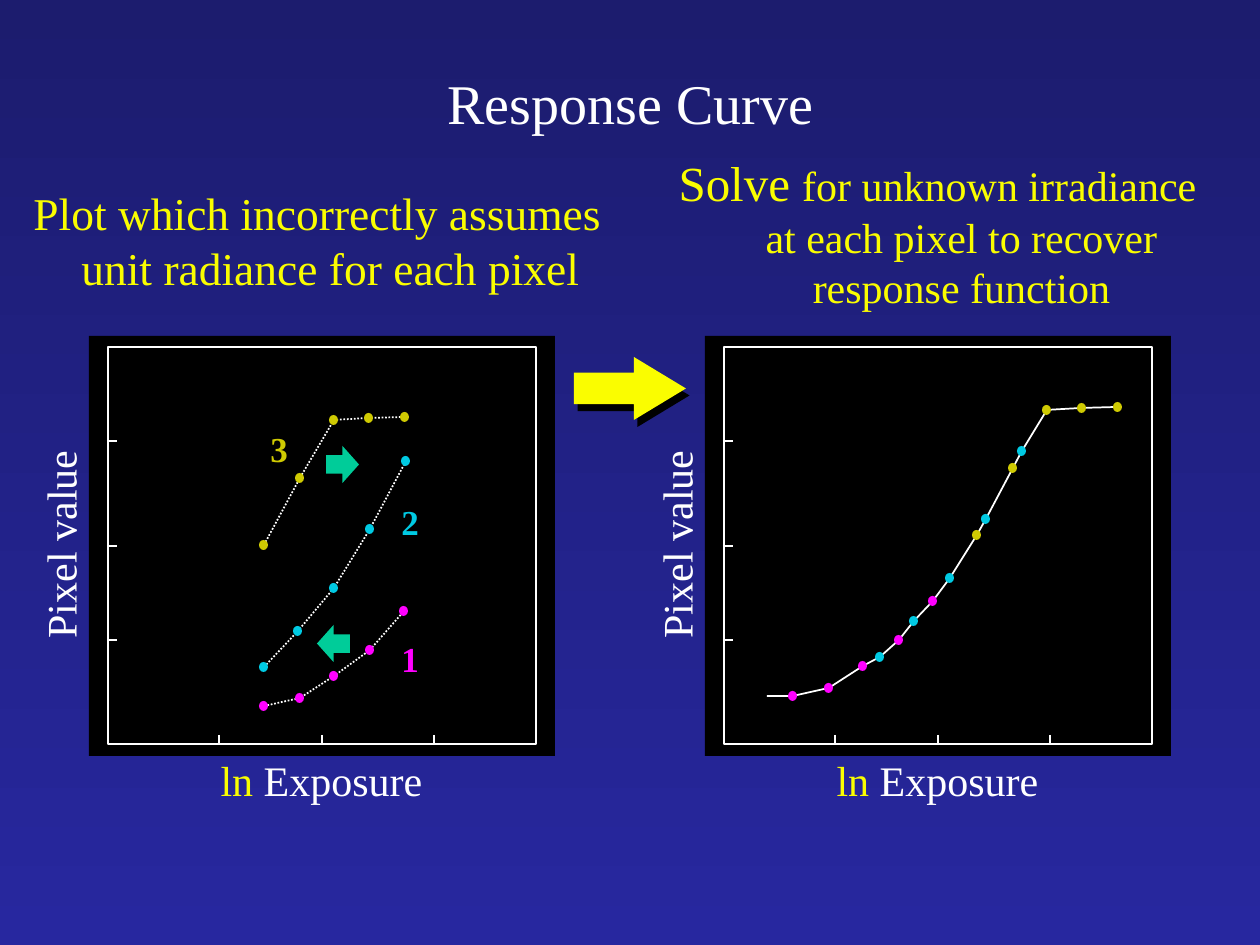
from lxml import etree
from pptx import Presentation
from pptx.dml.color import RGBColor
from pptx.enum.dml import MSO_LINE
from pptx.enum.shapes import MSO_CONNECTOR, MSO_SHAPE
from pptx.enum.text import PP_ALIGN
from pptx.oxml.ns import qn
from pptx.util import Pt

PX = 914400 // 126
FONT = "Times New Roman"
LEFT, CENTER = PP_ALIGN.LEFT, PP_ALIGN.CENTER
RECTANGLE, OVAL, ARROW = MSO_SHAPE.RECTANGLE, MSO_SHAPE.OVAL, MSO_SHAPE.RIGHT_ARROW
STRAIGHT, DOTTED = MSO_CONNECTOR.STRAIGHT, MSO_LINE.ROUND_DOT

WHITE = RGBColor(0xFF, 0xFF, 0xFF)
BLACK = RGBColor(0x00, 0x00, 0x00)
YELLOW = RGBColor(0xFA, 0xFD, 0x00)
OLIVE = RGBColor(0xCF, 0xCA, 0x02)
CYAN = RGBColor(0x00, 0xCA, 0xE3)
MAGENTA = RGBColor(0xFF, 0x00, 0xFF)
GREEN = RGBColor(0x00, 0xCC, 0x99)
NAVY_TOP = RGBColor(0x1C, 0x1C, 0x6E)
NAVY_BOTTOM = RGBColor(0x27, 0x27, 0x9F)

# box, runs (text, points, colour), alignment, hanging indent
HEADINGS = [
    ((192, 62, 877, 84), [("Response Curve", 32, WHITE)], CENTER, 48),
    ((21, 179, 602, 208),
     [("Plot which incorrectly assumes unit radiance for each pixel", 26, YELLOW)], LEFT, 48),
    ((658, 146, 559, 169),
     [("Solve ", 28, YELLOW),
      ("for unknown irradiance at each pixel to recover response function", 24, YELLOW)],
     CENTER, 48),
]
X_LABEL = [("ln", 24, YELLOW), (" Exposure", 24, WHITE)]
Y_LABEL = [("Pixel value", 24, WHITE)]

PANEL_STEP = 616
X_TICKS = (219, 322, 434)
Y_TICKS = (441, 546, 640)

# Points in the left panel; "shift" aligns the series with the recovered curve.
SERIES = [
    {"name": "3", "color": OLIVE, "label": (258, 421), "shift": (713, -10),
     "points": [(264, 545), (300, 478), (334, 420), (369, 418), (405, 417)]},
    {"name": "2", "color": CYAN, "label": (389, 494), "shift": (616, -10),
     "points": [(264, 667), (298, 631), (334, 588), (370, 529), (406, 461)]},
    {"name": "1", "color": MAGENTA, "label": (389, 631), "shift": (529, -10),
     "points": [(264, 706), (300, 698), (334, 676), (370, 650), (404, 611)]},
]
CURVE_START = (767, 696)


def scaled(values):
    return [value * PX for value in values]


def add_shadow(properties, distance, angle):
    """Append a hard black shadow; distance in points, angle in degrees."""
    effects = etree.SubElement(properties, qn("a:effectLst"))
    shadow = etree.SubElement(effects, qn("a:outerShdw"), dist=str(Pt(distance)),
                              dir=str(angle * 60000), algn="ctr", rotWithShape="0")
    etree.SubElement(shadow, qn("a:srgbClr"), val=str(BLACK))


def add_text(shapes, box, runs, alignment=CENTER, indent=0, rotation=0, bold=False, shadow=True):
    text_box = shapes.add_textbox(*scaled(box))
    text_box.rotation = rotation
    text_box.text_frame.word_wrap = True
    paragraph = text_box.text_frame.paragraphs[0]
    paragraph.alignment = alignment
    if indent:
        properties = paragraph._p.get_or_add_pPr()
        properties.set("marL", str(indent * PX))
        properties.set("indent", str(-indent * PX))
    for text, size, color in runs:
        run = paragraph.add_run()
        run.text = text
        run.font.size = Pt(size)
        run.font.bold = bold
        run.font.color.rgb = color
        if shadow:
            add_shadow(run.font._element, 2, 45)
        run.font.name = FONT


def style_line(line, dash=None):
    line.color.rgb = WHITE
    line.width = Pt(1)
    if dash:
        line.dash_style = dash


def add_filled(shapes, kind, box, color):
    shape = shapes.add_shape(kind, *scaled(box))
    shape.shadow.inherit = False
    shape.fill.solid()
    shape.fill.fore_color.rgb = color
    shape.line.fill.background()
    return shape


def add_tick(shapes, *ends):
    tick = shapes.add_connector(STRAIGHT, *scaled(ends))
    style_line(tick.line)
    etree.SubElement(tick._element.spPr, qn("a:effectLst"))


def add_panel(shapes, offset):
    add_filled(shapes, RECTANGLE, (89 + offset, 336, 466, 420), BLACK)
    frame = shapes.add_shape(RECTANGLE, *scaled((108 + offset, 347, 428, 397)))
    frame.shadow.inherit = False
    frame.fill.background()
    style_line(frame.line)
    for x in X_TICKS:
        add_tick(shapes, x + offset, 735, x + offset, 745)
    for y in Y_TICKS:
        add_tick(shapes, 107 + offset, y, 117 + offset, y)
    add_text(shapes, (88 + offset, 748, 467, 63), X_LABEL)
    add_text(shapes, (-155 + offset, 517, 422, 55), Y_LABEL, rotation=270)


def add_curve(shapes, points, dash=None):
    builder = shapes.build_freeform(*points[0], scale=PX)
    builder.add_line_segments(points[1:], close=False)
    curve = builder.convert_to_shape()
    curve.shadow.inherit = False
    curve.fill.background()
    style_line(curve.line, dash)


def add_dots(shapes, points, color):
    for x, y in points:
        add_filled(shapes, OVAL, (x - 5, y - 5, 9, 10), color)


def main():
    presentation = Presentation()
    presentation.slide_width, presentation.slide_height = scaled((1260, 945))
    slide = presentation.slides.add_slide(presentation.slide_layouts[6])
    shapes = slide.shapes

    background = slide.background.fill
    background.gradient()
    background.gradient_angle = 270
    for stop, color in zip(background.gradient_stops, (NAVY_TOP, NAVY_BOTTOM)):
        stop.color.rgb = color

    for box, runs, alignment, indent in HEADINGS:
        add_text(shapes, box, runs, alignment, indent)
    for offset in (0, PANEL_STEP):
        add_panel(shapes, offset)

    aligned = [[(x + series["shift"][0], y + series["shift"][1]) for x, y in series["points"]]
               for series in SERIES]
    add_curve(shapes, sorted([CURVE_START] + sum(aligned, [])))
    for series, aligned_points in zip(SERIES, aligned):
        color = series["color"]
        add_curve(shapes, series["points"], DOTTED)
        add_dots(shapes, series["points"], color)
        add_dots(shapes, aligned_points, color)
        add_text(shapes, (*series["label"], 69, 54), [(series["name"], 20, color)],
                 LEFT, bold=True, shadow=False)

    add_filled(shapes, ARROW, (326, 446, 33, 37), GREEN)
    add_filled(shapes, ARROW, (317, 625, 33, 37), GREEN).rotation = 180
    arrow = add_filled(shapes, ARROW, (574, 357, 112, 63), YELLOW)
    arrow.adjustments[1] = 0.826
    properties = arrow._element.spPr
    properties.remove(properties.find(qn("a:effectLst")))
    add_shadow(properties, 4.5, 63)

    presentation.save("out.pptx")


if __name__ == "__main__":
    main()
